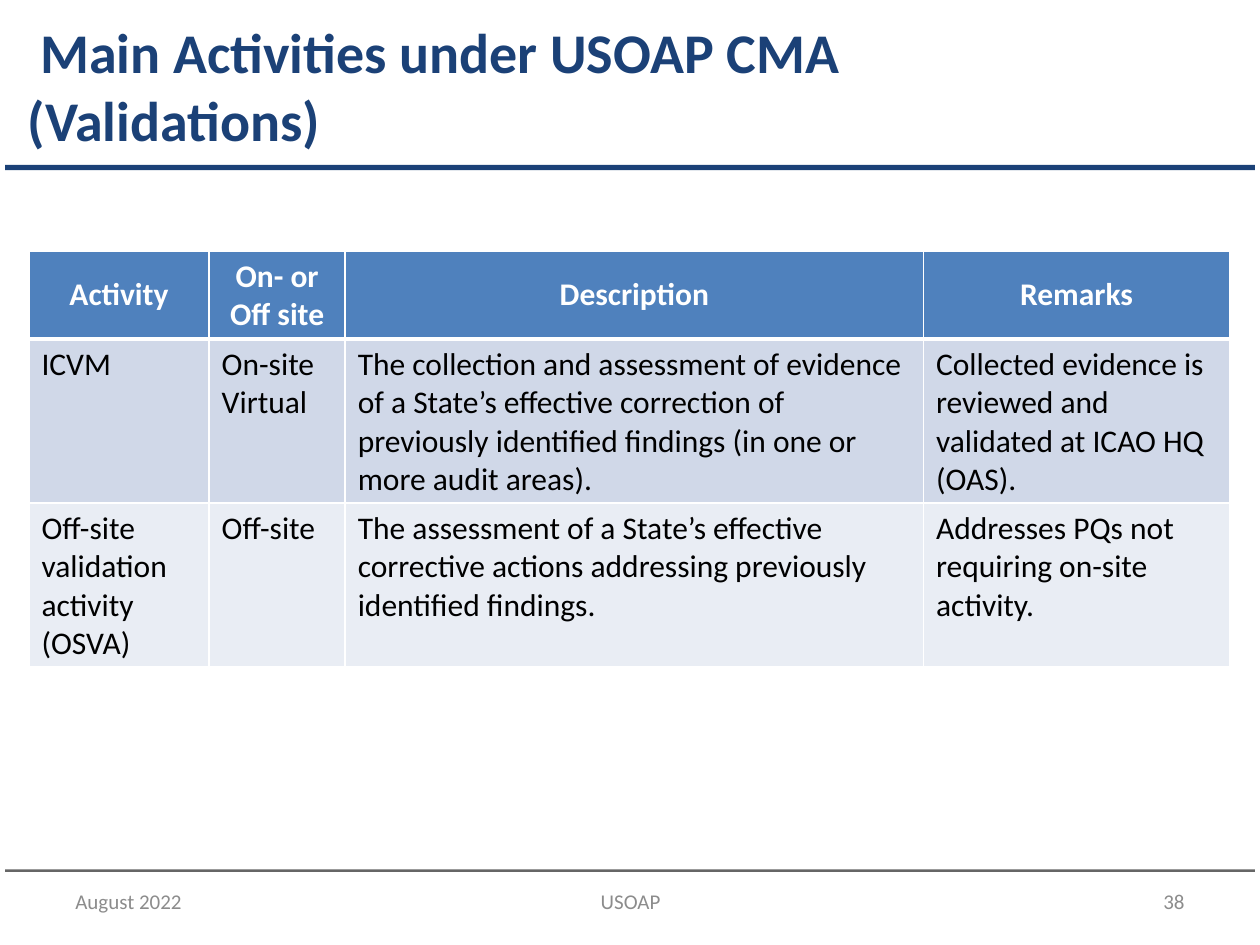
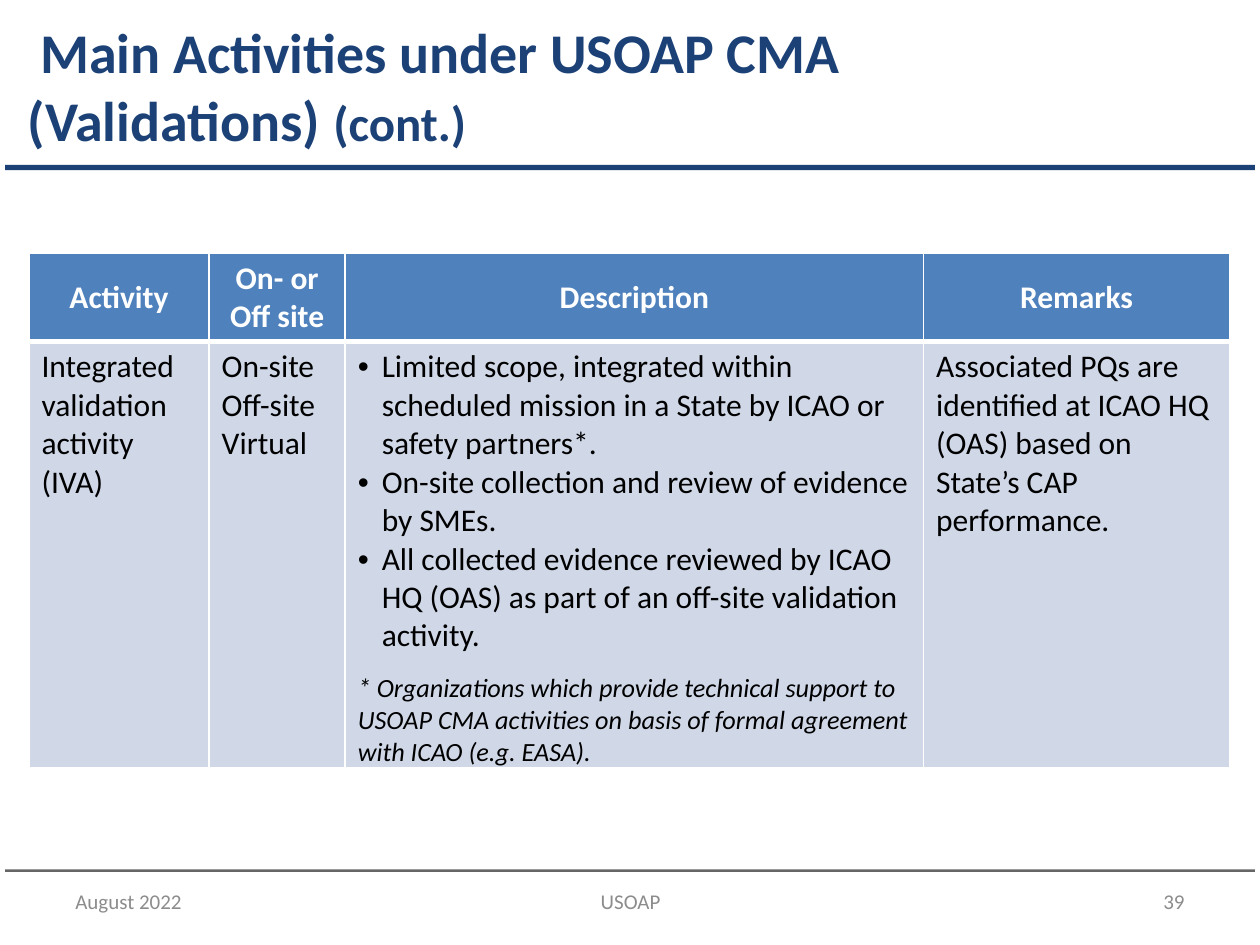
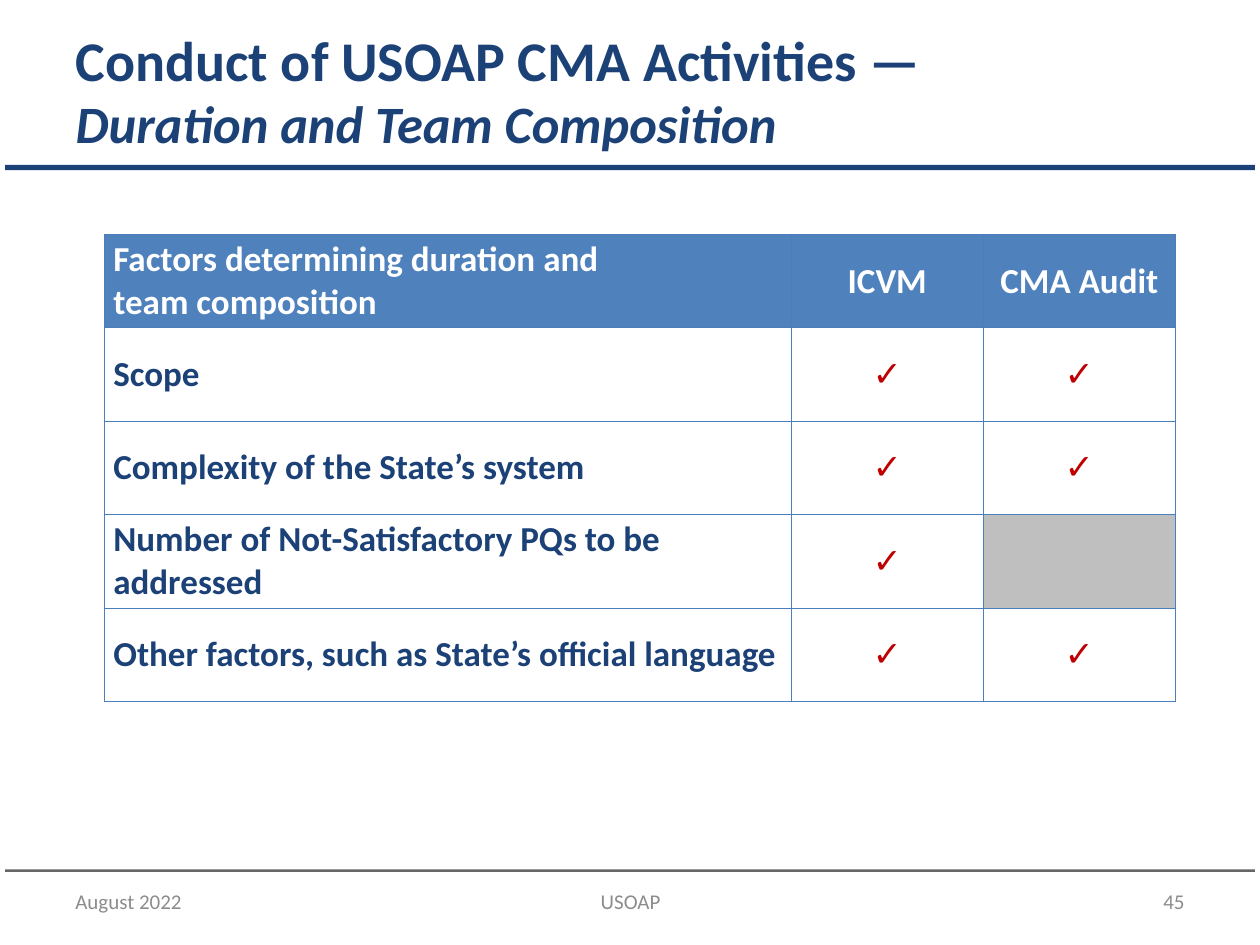
from lxml.etree import SubElement
from pptx import Presentation
from pptx.dml.color import RGBColor
from pptx.enum.shapes import MSO_SHAPE
from pptx.enum.text import MSO_ANCHOR, MSO_AUTO_SIZE, PP_ALIGN
from pptx.oxml.ns import qn
from pptx.util import Emu, Inches, Pt

WIDTH, HEIGHT = Inches(10), Inches(7.5)
GRID_COLUMNS, GRID_ROWS = 100, 75
FONT = "Calibri"
COLORS = {
    "navy": "1B4177", "rule": "666666", "footer": "8C8C8C",
    "header": "4F81BD", "odd": "D0D8E8", "even": "E9EDF4",
    "grid": "4B7EBC", "blocked": "BFBFBF", "check": "C00000",
    "white": "FFFFFF", "black": "000000",
}

TITLE_STYLE = {"size": 32, "bold": True, "color": "navy"}
FOOTER_STYLE = {"size": 12, "color": "footer"}
HEADER_STYLE = {"size": 18, "bold": True, "color": "white"}
BODY_STYLE = {"size": 18, "bold": False, "color": "black"}
NOTE_STYLE = {"size": 15, "italic": True}
FACTOR_STYLE = {"size": 20, "bold": True, "color": "navy"}

BULLET_INDENT = 1.9
ACTIVITY_COLUMNS = [14.3, 10.8, 45.9, 24.3]
ACTIVITY_HEADER = ["Activity", "On- or Off site", "Description", "Remarks"]
VALIDATIONS = [
    ["ICVM", ["On-site", "Virtual"],
     "The collection and assessment of evidence of a State’s effective correction of "
     "previously identified findings (in one or more audit areas).",
     "Collected evidence is reviewed and validated at ICAO HQ (OAS)."],
    ["Off-site validation activity (OSVA)", "Off-site",
     "The assessment of a State’s effective corrective actions addressing previously "
     "identified findings.",
     "Addresses PQs not requiring on-site activity."],
]
INTEGRATED_VALIDATION = [
    ["Integrated validation activity (IVA)", ["On-site", "Off-site", "Virtual"],
     [{"text": "Limited scope, integrated within scheduled mission in a State by ICAO "
               "or safety partners*.", "bullet": True},
      {"text": "On-site collection and review of evidence by SMEs.", "bullet": True},
      {"text": "All collected evidence reviewed by ICAO HQ (OAS) as part of an off-site "
               "validation activity.", "bullet": True},
      {"text": "* Organizations which provide technical support to USOAP CMA activities "
               "on basis of formal agreement with ICAO (e.g. EASA).",
       "before": 9.75, "style": NOTE_STYLE}],
     "Associated PQs are identified at ICAO HQ (OAS) based on State’s CAP performance."],
]
FACTOR_COLUMNS = [54.5, 15.25, 15.25]
FACTOR_HEADER = ["Factors determining duration and \nteam composition", "ICVM", "CMA Audit"]
FACTORS = [
    ["Scope", "✓", "✓"],
    ["Complexity of the State’s system", "✓", "✓"],
    ["Number of Not-Satisfactory PQs to be addressed", "✓", None],
    ["Other factors, such as State’s official language", "✓", "✓"],
]


def col(count):
    return Emu(round(WIDTH * count / GRID_COLUMNS))


def row(count):
    return Emu(round(HEIGHT * count / GRID_ROWS))


def box(left, top, width, height):
    return col(left), row(top), col(width), row(height)


def color(name):
    return RGBColor.from_string(COLORS[name])


def fill(part, name):
    part.fill.solid()
    part.fill.fore_color.rgb = color(name)


def format_font(font, style):
    font.name = FONT
    for key, value in style.items():
        if key == "color":
            font.color.rgb = color(value)
        else:
            setattr(font, key, Pt(value) if key == "size" else value)


def add_text(paragraph, text, style):
    for index, line in enumerate(text.split("\n")):
        if index:
            paragraph.add_line_break()
        if line:
            run = paragraph.add_run()
            run.text = line
            format_font(run.font, style)


def add_bullet(paragraph):
    properties = paragraph._p.get_or_add_pPr()
    properties.set("marL", str(col(BULLET_INDENT)))
    properties.set("indent", str(-col(BULLET_INDENT)))
    SubElement(properties, qn("a:buFont"), typeface="Arial")
    SubElement(properties, qn("a:buChar"), char="•")


def write_paragraphs(frame, content, style, align=PP_ALIGN.LEFT):
    entries = content if isinstance(content, list) else [content]
    for index, entry in enumerate(entries):
        entry = entry if isinstance(entry, dict) else {"text": entry}
        paragraph = frame.add_paragraph() if index else frame.paragraphs[0]
        paragraph.alignment = align
        if entry.get("bullet"):
            add_bullet(paragraph)
        if "before" in entry:
            paragraph.space_before = Pt(entry["before"])
        add_text(paragraph, entry["text"], {**style, **entry.get("style", {})})


def add_rule(slide, top, height, name):
    rule = slide.shapes.add_shape(MSO_SHAPE.RECTANGLE, *box(0.4, top, 99.2, height))
    rule.shadow.inherit = False
    fill(rule, name)
    rule.line.fill.background()


def add_footer(slide, number):
    for text, left, width, align in (
        ("August 2022", 5, 23.3, PP_ALIGN.LEFT),
        ("USOAP", 34.2, 31.7, PP_ALIGN.CENTER),
        (number, 71.7, 23.3, PP_ALIGN.RIGHT),
    ):
        frame = slide.shapes.add_textbox(*box(left, 69.5, width, 4)).text_frame
        frame.word_wrap = True
        frame.vertical_anchor = MSO_ANCHOR.MIDDLE
        write_paragraphs(frame, text, FOOTER_STYLE, align)


def add_titled_slide(deck, title_runs, left, top, number, spacing=None):
    slide = deck.slides.add_slide(deck.slide_layouts[5])
    add_rule(slide, 69, 0.2, "rule")
    add_rule(slide, 13.1, 0.4, "navy")
    title = slide.shapes.title
    title.left, title.top, title.width, title.height = box(left, top, 90, 12.5)
    frame = title.text_frame
    frame.word_wrap = True
    frame.auto_size = MSO_AUTO_SIZE.NONE
    frame.vertical_anchor = MSO_ANCHOR.MIDDLE
    heading = frame.paragraphs[0]
    heading.alignment = PP_ALIGN.LEFT
    if spacing:
        heading.line_spacing = Pt(spacing)
    for text, changes in title_runs:
        add_text(heading, text, {**TITLE_STYLE, **changes})
    add_footer(slide, number)
    return slide


def set_borders(cell, name, left=1, right=1, top=1, bottom=1):
    properties = cell._tc.get_or_add_tcPr()
    for side, points in zip("LRTB", (left, right, top, bottom)):
        line = SubElement(properties, qn(f"a:ln{side}"), w=str(Pt(points)))
        SubElement(SubElement(line, qn("a:solidFill")), qn("a:srgbClr"), val=COLORS[name])


def add_grid(slide, left, top, widths, heights):
    table = slide.shapes.add_table(
        len(heights), len(widths), *box(left, top, sum(widths), sum(heights))).table
    table.horz_banding = False
    for column, width in zip(table.columns, widths):
        column.width = col(width)
    for line, height in zip(table.rows, heights):
        line.height = row(height)
    return table


def add_activity_table(slide, top, activities, activity_height):
    heights = [6.8] + [activity_height] * len(activities)
    table = add_grid(slide, 2.3, top, ACTIVITY_COLUMNS, heights)
    for r, entries in enumerate([ACTIVITY_HEADER] + activities):
        for c, content in enumerate(entries):
            cell = table.cell(r, c)
            set_borders(cell, "white", top=3 if r == 1 else 1, bottom=1 if r else 3)
            if r:
                fill(cell, "odd" if r % 2 else "even")
                write_paragraphs(cell.text_frame, content, BODY_STYLE)
            else:
                fill(cell, "header")
                cell.vertical_anchor = MSO_ANCHOR.MIDDLE
                write_paragraphs(cell.text_frame, content, HEADER_STYLE, PP_ALIGN.CENTER)


def add_factor_table(slide):
    table = add_grid(slide, 8.3, 18.6, FACTOR_COLUMNS, [7.42] * (len(FACTORS) + 1))
    margins = {"margin_left": col(0.7), "margin_right": col(0.7),
               "margin_top": 0, "margin_bottom": 0,
               "vertical_anchor": MSO_ANCHOR.MIDDLE}
    for r, entries in enumerate([FACTOR_HEADER] + FACTORS):
        for c, content in enumerate(entries):
            cell = table.cell(r, c)
            for key, value in margins.items():
                setattr(cell, key, value)
            set_borders(cell, "grid", 0.75, 0.75, 0.75, 0.75)
            if content is None:
                fill(cell, "blocked")
                continue
            fill(cell, "white" if r else "header")
            ink = "white" if r == 0 else "check" if c else "navy"
            write_paragraphs(cell.text_frame, content, {**FACTOR_STYLE, "color": ink},
                             PP_ALIGN.CENTER if c else PP_ALIGN.LEFT)


def main():
    deck = Presentation()
    deck.slide_width, deck.slide_height = WIDTH, HEIGHT

    validations_title = " Main Activities under USOAP CMA (Validations)"
    validations = add_titled_slide(deck, [(validations_title, {})], 1.2, 0.5, "38")
    add_activity_table(validations, 19.9, VALIDATIONS, 11.1)

    continued = add_titled_slide(
        deck, [(validations_title + " ", {}), ("(cont.)", {"size": 28})], 1.2, 0.5, "39")
    add_activity_table(continued, 20.1, INTEGRATED_VALIDATION, 33.3)

    composition = add_titled_slide(
        deck,
        [("Conduct of USOAP CMA Activities —\n", {}),
         ("Duration and Team Composition", {"size": 30, "italic": True})],
        5, 1.1, "45", spacing=35)
    add_factor_table(composition)

    deck.save("out.pptx")


if __name__ == "__main__":
    main()
